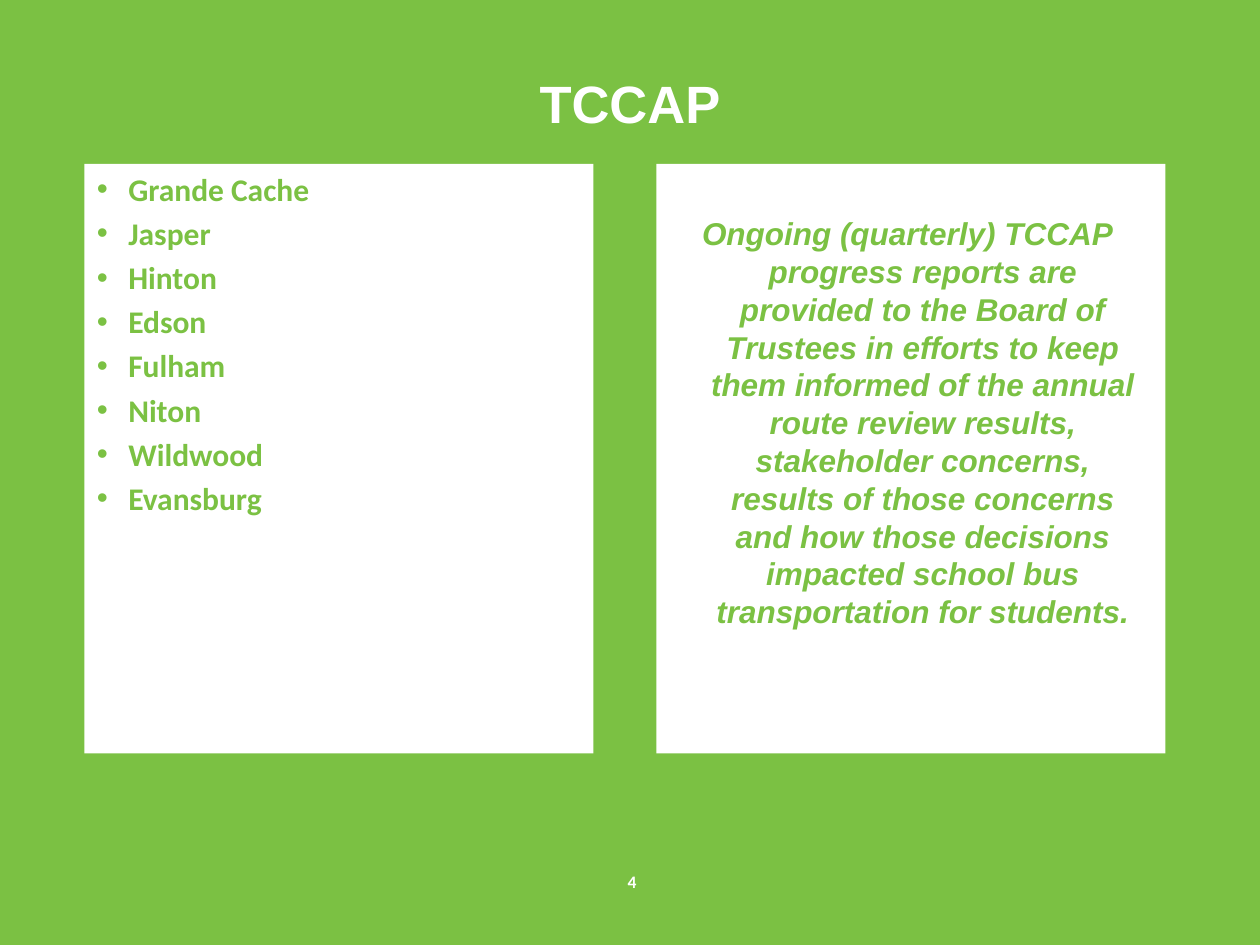
from pptx import Presentation
from pptx.dml.color import RGBColor
from pptx.enum.shapes import MSO_SHAPE
from pptx.enum.text import MSO_ANCHOR, PP_ALIGN
from pptx.oxml import parse_xml
from pptx.oxml.ns import nsdecls
from pptx.util import Inches, Pt

COLORS = {"green": "7BC143", "white": "FFFFFF"}
TOWNS = ["Grande Cache", "Jasper", "Hinton", "Edson",
         "Fulham", "Niton", "Wildwood", "Evansburg"]
REPORTS = ("Ongoing (quarterly) TCCAP progress reports are provided to the "
           "Board of Trustees in efforts to keep them informed of the annual "
           "route review results, stakeholder concerns, results of those "
           "concerns and how those decisions impacted school bus "
           "transportation for students.")


def add_run(p, text, font, size, color, italic=False):
    r = p.add_run()
    r.text = text
    r.font.name = font
    r.font.size = Pt(size)
    r.font.bold = True
    r.font.italic = italic
    r.font.color.rgb = RGBColor.from_string(COLORS[color])


def set_hanging_indent(p):
    pPr = p._p.get_or_add_pPr()
    pPr.set("marL", str(Inches(0.25)))
    pPr.set("indent", str(Inches(-0.25)))
    return pPr


prs = Presentation()
prs.slide_width, prs.slide_height = Inches(10), Inches(7.5)
s = prs.slides.add_slide(prs.slide_layouts[6])
s.background.fill.solid()
s.background.fill.fore_color.rgb = RGBColor.from_string(COLORS["green"])

# Title and slide number
for text, box, font, size in [
    ("TCCAP", (0.5, 0.47, 9, 0.68), "Arial", 30),
    ("4", (4.82, 6.86, 0.39, 0.27), "Calibri", 10),
]:
    tf = s.shapes.add_textbox(*[Inches(v) for v in box]).text_frame
    tf.word_wrap = True
    tf.vertical_anchor = MSO_ANCHOR.MIDDLE
    p = tf.paragraphs[0]
    p.alignment = PP_ALIGN.CENTER
    add_run(p, text, font, size, "white")

# White panels
panels = []
for left in (0.67, 5.21):
    sp = s.shapes.add_shape(MSO_SHAPE.RECTANGLE, Inches(left), Inches(1.3),
                            Inches(4.04), Inches(4.68))
    sp.shadow.inherit = False
    sp.fill.solid()
    sp.fill.fore_color.rgb = RGBColor.from_string(COLORS["white"])
    sp.line.fill.background()
    sp.text_frame.word_wrap = True
    sp.text_frame.vertical_anchor = MSO_ANCHOR.TOP
    panels.append(sp.text_frame)
towns_tf, reports_tf = panels

# Town list
for i, town in enumerate(TOWNS):
    p = towns_tf.add_paragraph() if i else towns_tf.paragraphs[0]
    pPr = set_hanging_indent(p)
    pPr.append(parse_xml(f'<a:buClr {nsdecls("a")}><a:srgbClr val="{COLORS["green"]}"/></a:buClr>'))
    pPr.append(parse_xml(f'<a:buFont {nsdecls("a")} typeface="Arial"/>'))
    pPr.append(parse_xml(f'<a:buChar {nsdecls("a")} char="•"/>'))
    p.alignment = PP_ALIGN.LEFT
    if i:
        p.space_before = Pt(3.6)
    add_run(p, town, "Calibri", 18, "green")

# Reporting statement
reports_tf.margin_top = Inches(0.4)
reports_tf.margin_right = Inches(0.16)
p = reports_tf.paragraphs[0]
set_hanging_indent(p)
p.alignment = PP_ALIGN.CENTER
p.line_spacing = Pt(21.6)
add_run(p, REPORTS, "Arial", 18, "green", italic=True)

prs.save("out.pptx")
